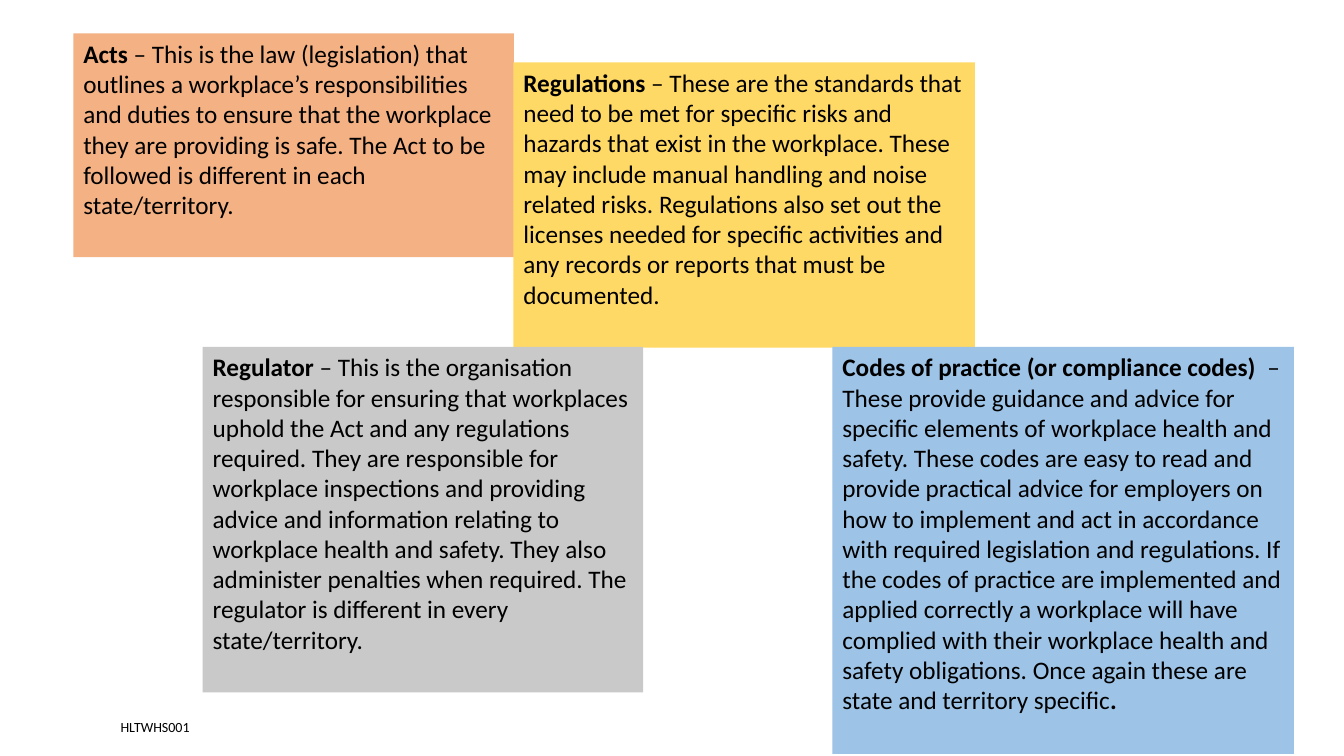
from pptx import Presentation
from pptx import util as u
from pptx.dml.color import RGBColor
from pptx.enum import shapes, text

BLACK = RGBColor(0x00, 0x00, 0x00)
ORANGE = RGBColor(0xF4, 0xB1, 0x83)
YELLOW = RGBColor(0xFF, 0xD9, 0x66)
GREY = RGBColor(0xC9, 0xC9, 0xC9)
BLUE = RGBColor(0x9D, 0xC3, 0xE6)

NARROW, WIDE = 11.1, 11.63
LOWER_ROW = 8.74

# Fill, (left, top, width, height) in cm, runs as (wording, bold)
DEFINITIONS = [
    (ORANGE, (1.85, 0.84, NARROW, 5.64), [
        ("Acts", True),
        (" – This is the law (legislation) that outlines a workplace’s "
         "responsibilities and duties to ensure that the workplace they are "
         "providing is safe. The Act to be followed is different in each "
         "state/territory.", False)]),
    (YELLOW, (12.94, 1.57, WIDE, 7.19), [
        ("Regulations", True),
        (" – These are the standards that need to be met for specific risks "
         "and hazards that exist in the workplace. These may include manual "
         "handling and noise related risks. Regulations also set out the "
         "licenses needed for specific activities and any records or reports "
         "that must be documented.", False)]),
    (GREY, (5.11, LOWER_ROW, NARROW, 8.71), [
        ("Regulator", True),
        (" – This is the organisation responsible for ensuring that "
         "workplaces uphold the Act and any regulations required. They are "
         "responsible for workplace inspections and providing advice and "
         "information relating to workplace health and safety. They also "
         "administer penalties when required. The regulator is different in "
         "every state/territory.", False)]),
    (BLUE, (20.98, LOWER_ROW, WIDE, 10.26), [
        ("Codes of practice (or compliance codes) ", True),
        (" – These provide guidance and advice for specific elements of "
         "workplace health and safety. These codes are easy to read and "
         "provide practical advice for employers on how to implement and act "
         "in accordance with required legislation and regulations. If the "
         "codes of practice are implemented and applied correctly a workplace "
         "will have complied with their workplace health and safety "
         "obligations. Once again these are state and territory specific",
         False),
        (".", True)]),
]
UNIT_CODE = ((2.79, 17.98, 2.31, 0.69), [("HLTWHS001", False)])


def write_runs(shape, runs, size, wrap):
    frame = shape.text_frame
    frame_format = {"word_wrap": wrap, "vertical_anchor": text.MSO_ANCHOR.TOP,
                    "auto_size": text.MSO_AUTO_SIZE.NONE}
    for name, value in frame_format.items():
        setattr(frame, name, value)
    paragraph = frame.paragraphs[0]
    paragraph.alignment = text.PP_ALIGN.LEFT
    for wording, bold in runs:
        run = paragraph.add_run()
        run.text = wording
        font_format = {"name": "Calibri", "size": u.Pt(size), "bold": bold}
        for name, value in font_format.items():
            setattr(run.font, name, value)
        run.font.color.rgb = BLACK


def main():
    presentation = Presentation()
    presentation.slide_width = u.Cm(33.87)
    presentation.slide_height = u.Cm(19.05)
    slide = presentation.slides.add_slide(presentation.slide_layouts[6])

    for fill, place, runs in DEFINITIONS:
        box = slide.shapes.add_shape(shapes.MSO_SHAPE.RECTANGLE, *map(u.Cm, place))
        box.shadow.inherit = False
        box.fill.solid()
        box.fill.fore_color.rgb = fill
        box.line.fill.background()
        write_runs(box, runs, size=18, wrap=True)

    place, runs = UNIT_CODE
    label = slide.shapes.add_textbox(*map(u.Cm, place))
    write_runs(label, runs, size=10, wrap=False)

    presentation.save("out.pptx")


if __name__ == "__main__":
    main()
